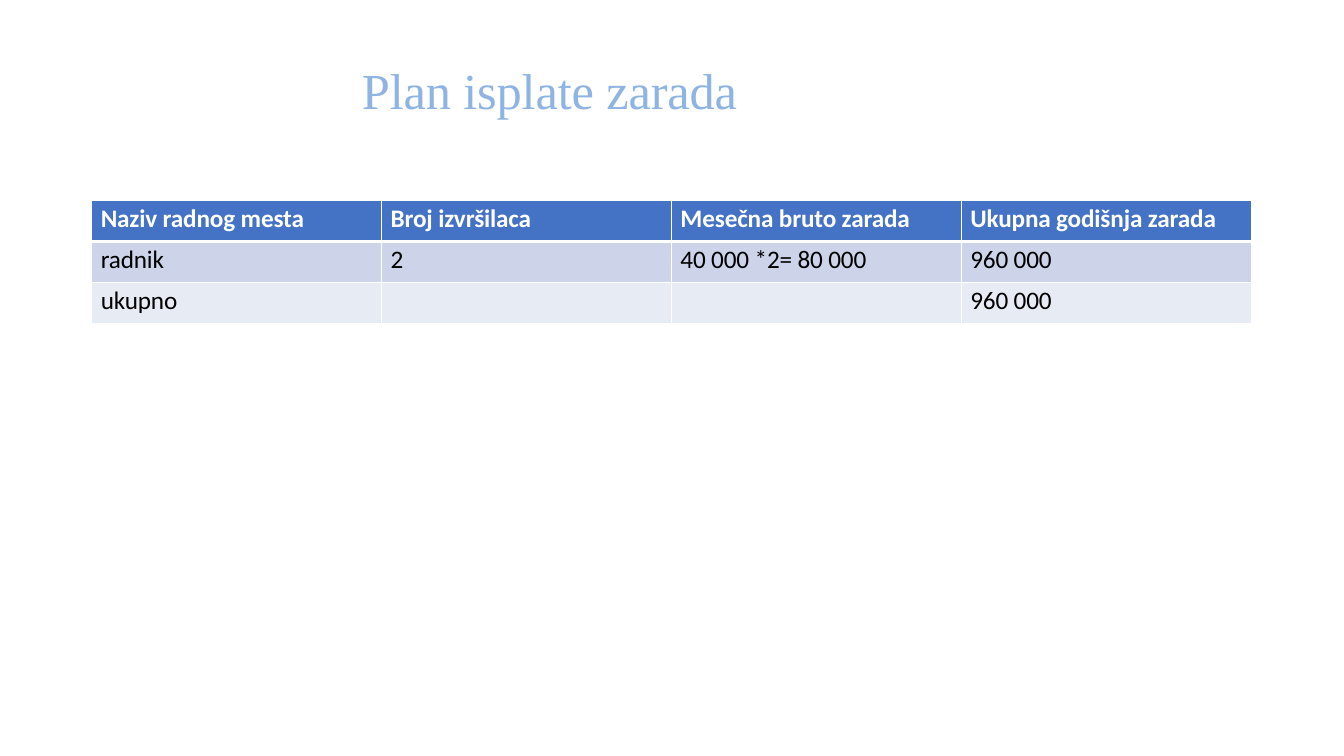
from lxml import etree
from pptx import Presentation
from pptx.dml.color import RGBColor
from pptx.enum.text import MSO_ANCHOR, MSO_AUTO_SIZE, PP_ALIGN
from pptx.oxml.ns import qn
from pptx.util import Inches, Pt

COLORS = {
    "title": "8EB4E3",
    "header": "4472C4",
    "odd row": "CDD4EA",
    "even row": "E7EBF4",
    "white": "FFFFFF",
    "black": "000000",
}


def format_run(run, font_name, size, color, bold=False):
    run.font.name = font_name
    run.font.size = Pt(size)
    run.font.bold = bold
    run.font.color.rgb = RGBColor.from_string(COLORS[color])
    run.font._element.set("spc", "-10")


def set_borders(cell, widths):
    properties = cell._tc.get_or_add_tcPr()
    for index, (side, width) in enumerate(widths.items()):
        line = etree.Element(qn(f"a:ln{side}"), w=str(Pt(width)))
        fill = etree.SubElement(line, qn("a:solidFill"))
        etree.SubElement(fill, qn("a:srgbClr"), val=COLORS["white"])
        properties.insert(index, line)


presentation = Presentation()
presentation.slide_width = Inches(13.33)
presentation.slide_height = Inches(7.5)
slide = presentation.slides.add_slide(presentation.slide_layouts[5])

# Title
title = slide.shapes.title
title.left, title.top = Inches(3.58), Inches(0.58)
title.width, title.height = Inches(6.08), Inches(0.62)
text_frame = title.text_frame
text_frame.text = "Plan isplate zarada"
text_frame.word_wrap = True
text_frame.auto_size = MSO_AUTO_SIZE.NONE
text_frame.vertical_anchor = MSO_ANCHOR.TOP
text_frame.margin_left = Inches(0.01)
text_frame.margin_top = Inches(0.01)
text_frame.margin_right = text_frame.margin_bottom = 0
paragraph = text_frame.paragraphs[0]
paragraph.alignment = PP_ALIGN.LEFT
paragraph.space_before = Pt(1)
format_run(paragraph.runs[0], "Times New Roman", 36, "title")

# Salary table
salaries = [
    ["Naziv radnog mesta", "Broj izvršilaca", "Mesečna bruto zarada", "Ukupna godišnja zarada"],
    ["radnik", "2", "40 000 *2= 80 000", "960 000"],
    ["ukupno", "", "", "960 000"],
]
row_fills = ["header", "odd row", "even row"]
table = slide.shapes.add_table(
    len(salaries), len(salaries[0]), Inches(0.91), Inches(1.99), Inches(11.5), Inches(1.22)
).table

for row_index, (row, row_fill) in enumerate(zip(salaries, row_fills)):
    is_header = row_index == 0
    # A thick rule separates the header from the body
    border_widths = {"L": 1, "R": 1, "T": 3 if row_index == 1 else 1, "B": 3 if is_header else 1}
    for column_index, text in enumerate(row):
        cell = table.cell(row_index, column_index)
        cell.fill.solid()
        cell.fill.fore_color.rgb = RGBColor.from_string(COLORS[row_fill])
        set_borders(cell, border_widths)
        cell.margin_left, cell.margin_top = Inches(0.09), Inches(0.03)
        cell.margin_right = cell.margin_bottom = 0
        cell.text_frame.text = text
        paragraph = cell.text_frame.paragraphs[0]
        paragraph.space_before = Pt(2.2)
        for run in paragraph.runs:
            format_run(run, "Calibri", 18, "white" if is_header else "black", is_header)

presentation.save("out.pptx")
